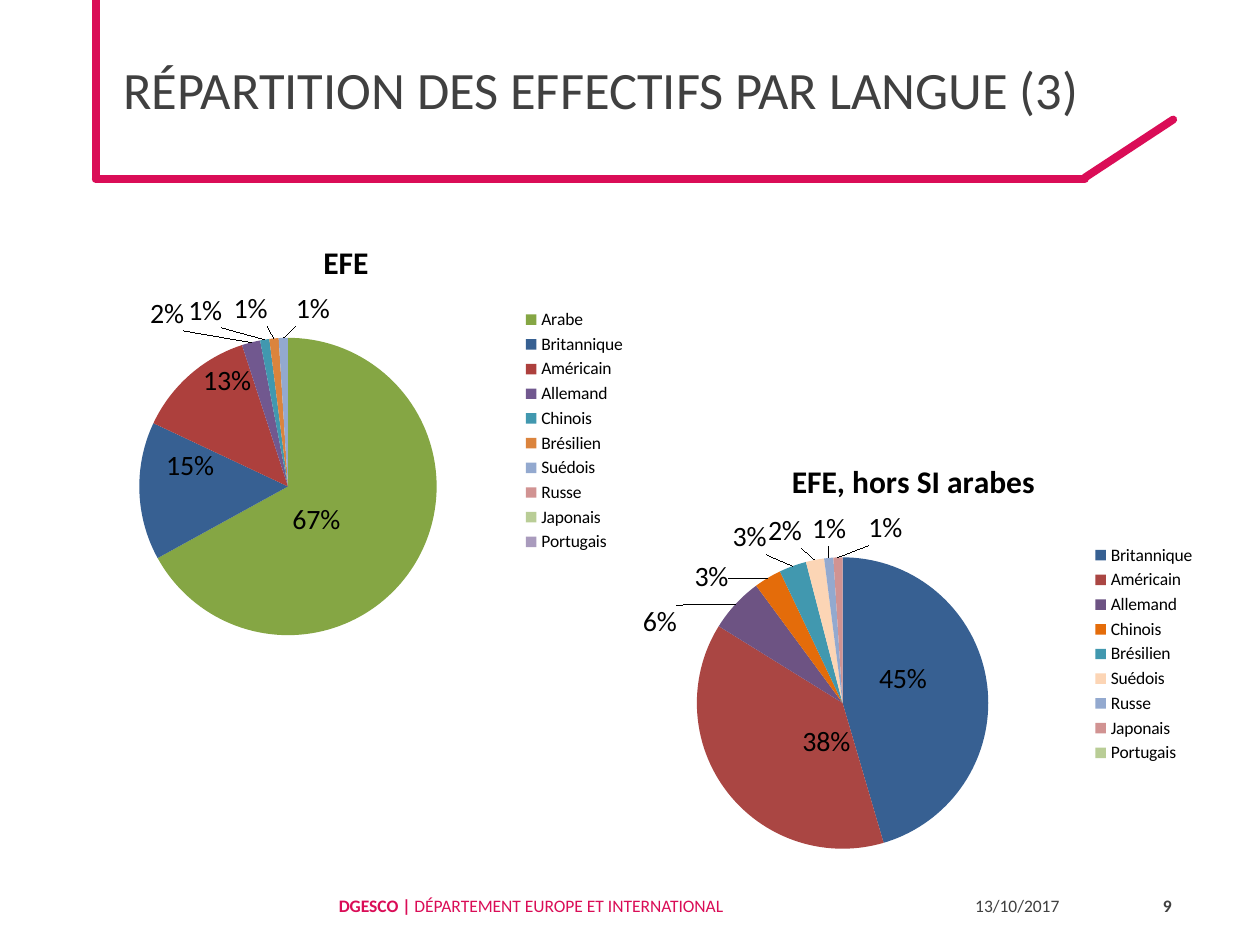
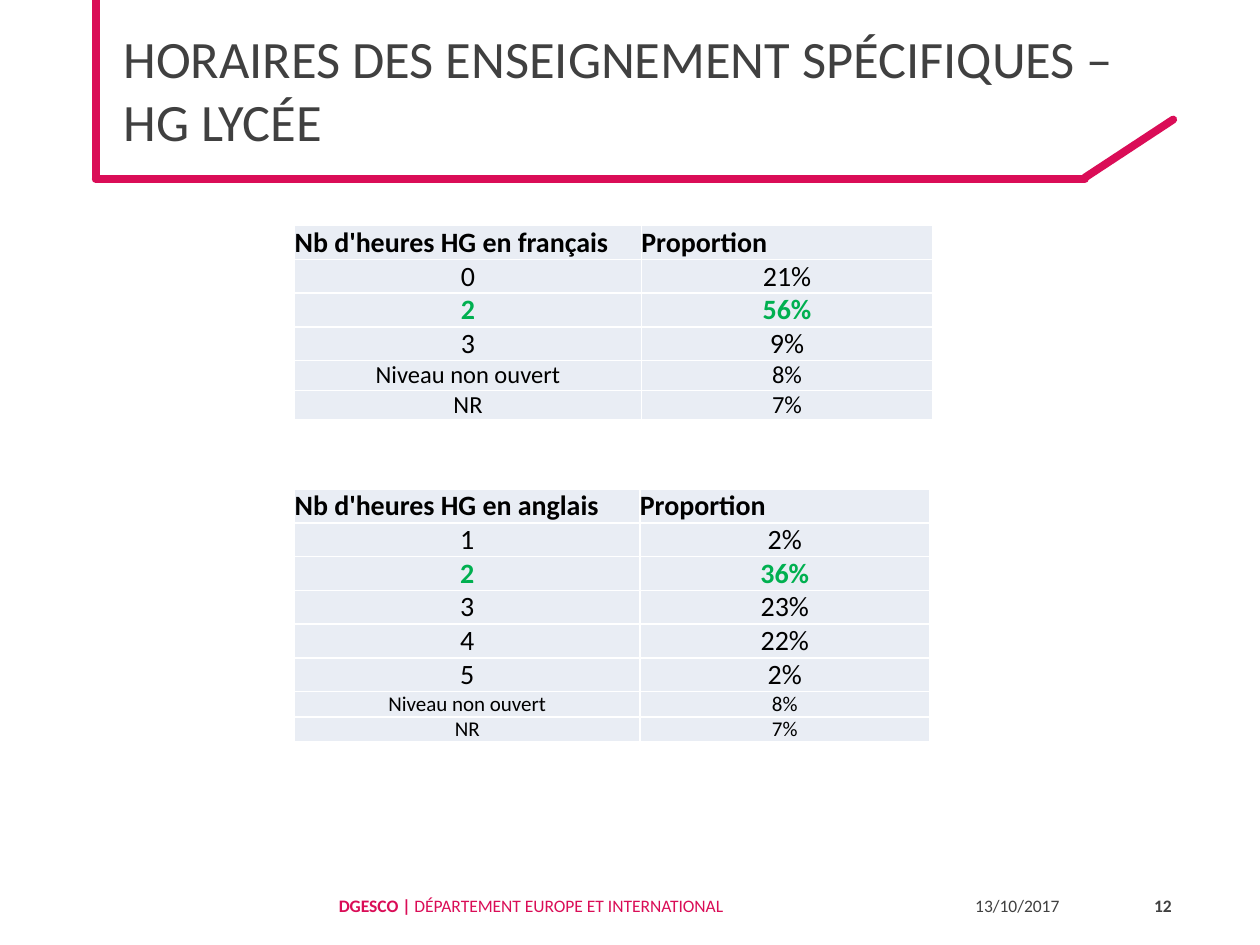
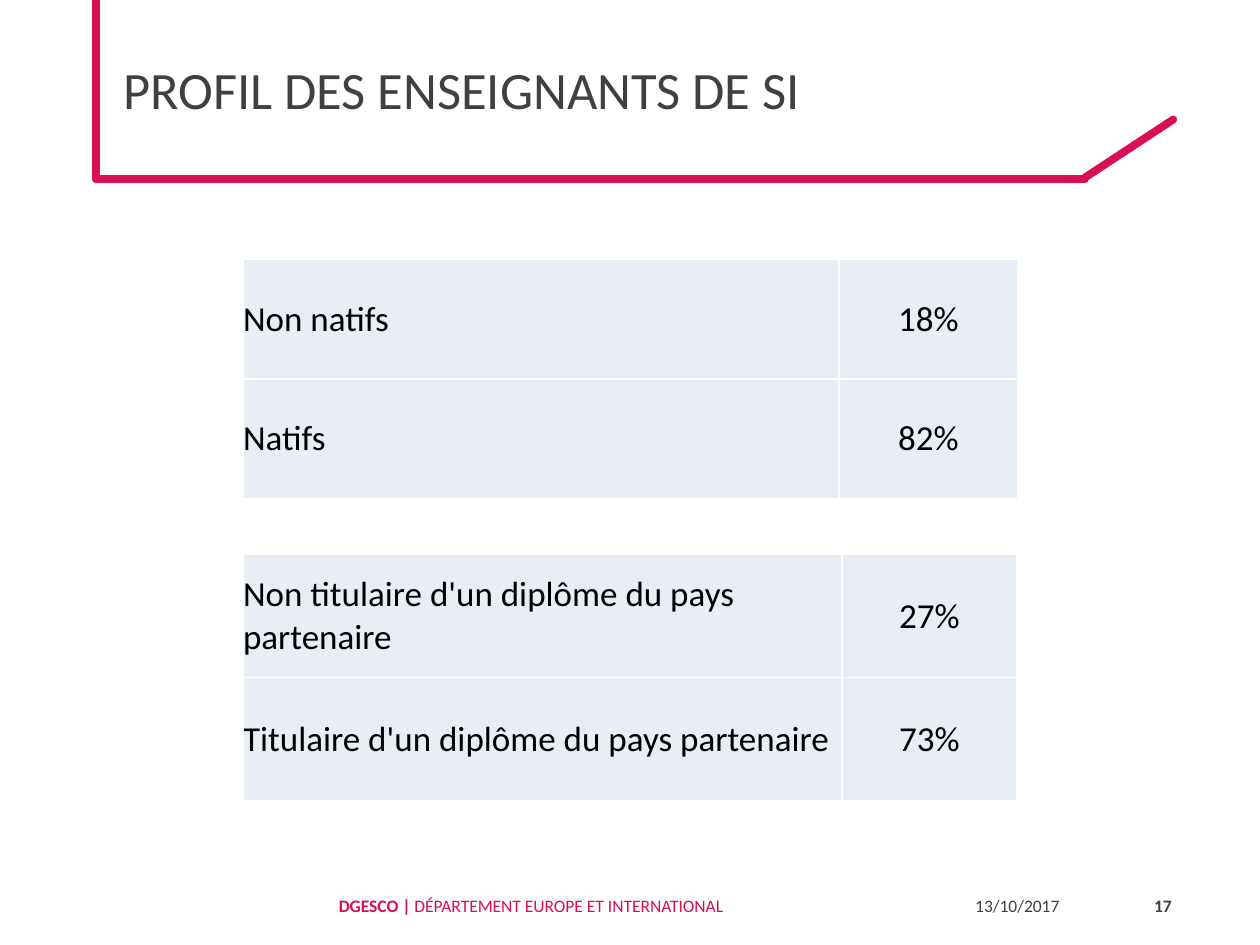
import dataclasses
import typing

import lxml.etree
import pptx
import pptx.chart.data
import pptx.chart.series
import pptx.dml.color
import pptx.enum.chart
import pptx.enum.shapes
import pptx.enum.text
import pptx.oxml.ns
import pptx.slide
import pptx.table
import pptx.util

Cm = pptx.util.Cm
Pt = pptx.util.Pt
qn = pptx.oxml.ns.qn
ALIGN = pptx.enum.text.PP_ALIGN
ANCHOR = pptx.enum.text.MSO_ANCHOR
LABEL = pptx.enum.chart.XL_LABEL_POSITION

FONT = "Calibri"
COLORS = {
    "pink": "DA0D57", "grey": "404040", "black": "000000", "white": "FFFFFF",
    "highlight": "00B050", "cell": "E9EDF4",
    "olive": "85A644", "navy": "376092", "brick": "AD403D", "red": "AA4643",
    "violet": "71588F", "plum": "6D5383", "teal": "4198AF", "amber": "DB843D",
    "orange": "E46C0A", "peach": "FCD5B5", "sky": "93A9CF", "rose": "D19392",
    "lime": "B9CD96", "lilac": "A99BBD",
}
LINE_HEIGHTS = {16: 0.68, 14: 0.6, 12: 0.51}
CHART_SIZE = (11.99, 8.99)


class Segment(typing.NamedTuple):
    x1: float
    y1: float
    x2: float
    y2: float


class Box(typing.NamedTuple):
    left: float
    top: float
    width: float
    height: float


class Run(typing.NamedTuple):
    text: str
    color: str
    size: float = 10
    bold: bool = False


class Slice(typing.NamedTuple):
    language: str
    percent: int
    color: str
    dx: float = 0
    dy: float = 0


@dataclasses.dataclass
class Pie:
    title: str
    left: float
    top: float
    title_at: tuple[float, float]
    plot_at: tuple[float, float, float, float]
    slices: list[Slice]


@dataclasses.dataclass
class Row:
    label: str
    value: str
    size: int = 16
    bold: bool = False
    color: str = "black"
    header: bool = False


@dataclasses.dataclass
class Grid:
    left: float
    top: float
    widths: tuple[float, float]
    rows: list[Row]
    row_height: float = 0
    label_align: ALIGN = ALIGN.CENTER
    anchor: ANCHOR = ANCHOR.BOTTOM


FRAME = [
    Segment(1.93, 3.61, 21.87, 3.61),
    Segment(21.87, 3.58, 23.65, 2.41),
    Segment(1.93, 3.58, 1.93, 0),
]
TITLE_BOX = Box(2.24, 0, 21.89, 3.58)
FOOTER_BOX = Box(6.58, 17.75, 12.83, 1.02)
DATE_BOX = Box(19.41, 17.75, 3.23, 1.02)
NUMBER_BOX = Box(22.63, 17.75, 1.24, 1.02)

PIES = [
    Pie("EFE", 0.89, 4.19, (0.46, 0.06), (0.16, 0.29, 0.5, 0.67), [
        Slice("Arabe", 67, "olive", -0.06, -0.01),
        Slice("Britannique", 15, "navy", -0.04, -0.05),
        Slice("Américain", 13, "brick", -0.02, -0.11),
        Slice("Allemand", 2, "violet", -0.11, -0.01),
        Slice("Chinois", 1, "teal", -0.07, -0.01),
        Slice("Brésilien", 1, "amber", -0.01, -0.01),
        Slice("Suédois", 1, "sky", 0.05, -0.01),
        Slice("Russe", 0, "rose"),
        Slice("Japonais", 0, "lime"),
        Slice("Portugais", 0, "lilac"),
    ]),
    Pie("EFE, hors SI arabes", 12.37, 8.69, (0.29, 0.05), (0.14, 0.28, 0.49, 0.66), [
        Slice("Britannique", 45, "navy", -0.02, -0.03),
        Slice("Américain", 38, "red", 0.07, -0.01),
        Slice("Allemand", 6, "plum", -0.09, 0.09),
        Slice("Chinois", 3, "orange", -0.06, 0.05),
        Slice("Brésilien", 3, "teal", -0.04, -0.01),
        Slice("Suédois", 2, "peach", -0.02, -0.01),
        Slice("Russe", 1, "sky", 0.03, -0.01),
        Slice("Japonais", 1, "rose", 0.08, -0.01),
        Slice("Portugais", 0, "lime"),
    ]),
]

HOURS = [
    Grid(5.94, 4.55, (6.99, 5.87), [
        Row("Nb d'heures HG en français", "Proportion", bold=True, header=True),
        Row("0", "21%"),
        Row("2", "56%", bold=True, color="highlight"),
        Row("3", "9%"),
        Row("Niveau non ouvert", "8%", 14),
        Row("NR", "7%", 14),
    ]),
    Grid(5.94, 9.86, (6.96, 5.84), [
        Row("Nb d'heures HG en anglais", "Proportion", bold=True, header=True),
        Row("1", "2%"),
        Row("2", "36%", bold=True, color="highlight"),
        Row("3", "23%"),
        Row("4", "22%"),
        Row("5", "2%"),
        Row("Niveau non ouvert", "8%", 12),
        Row("NR", "7%", 12),
    ]),
]

PROFILES = [
    Grid(4.9, 5.23, (12.01, 3.61), [
        Row("Non natifs", "18%", 20),
        Row("Natifs", "82%", 20),
    ], 2.41, ALIGN.LEFT, ANCHOR.MIDDLE),
    Grid(4.9, 11.18, (12.07, 3.53), [
        Row("Non titulaire d'un diplôme du pays partenaire", "27%", 20),
        Row("Titulaire d'un diplôme du pays partenaire", "73%", 20),
    ], 2.48, ALIGN.LEFT, ANCHOR.MIDDLE),
]


def rgb(name: str) -> pptx.dml.color.RGBColor:
    return pptx.dml.color.RGBColor.from_string(COLORS[name])


def set_format(target: typing.Any, **values: typing.Any) -> None:
    for name, value in values.items():
        setattr(target, name, value)


def set_font(font: typing.Any, size: float, color: str, bold: bool = False) -> None:
    set_format(font, name=FONT, size=Pt(size), bold=bold)
    font.color.rgb = rgb(color)


def add_text(s: pptx.slide.Slide, box: Box, runs: list[Run], align: ALIGN = ALIGN.LEFT) -> None:
    sp = s.shapes.add_textbox(*map(Cm, box))
    tf = sp.text_frame
    set_format(tf, word_wrap=True, vertical_anchor=ANCHOR.MIDDLE)
    p = tf.paragraphs[0]
    p.alignment = align
    for run in runs:
        for i, line in enumerate(run.text.split("\n")):
            if i:
                p.add_line_break()
            r = p.add_run()
            r.text = line
            set_font(r.font, run.size, run.color, run.bold)


def add_segment(s: pptx.slide.Slide, segment: Segment) -> None:
    straight = pptx.enum.shapes.MSO_CONNECTOR.STRAIGHT
    c = s.shapes.add_connector(straight, *map(Cm, segment))
    c.line.width = Pt(4.5)
    c.line.color.rgb = rgb("pink")
    spPr = c.element.spPr
    spPr.find(qn("a:ln")).set("cap", "rnd")
    lxml.etree.SubElement(spPr, qn("a:effectLst"))


def add_base(prs: typing.Any, title: str, number: int) -> pptx.slide.Slide:
    s = prs.slides.add_slide(prs.slide_layouts[6])
    for segment in FRAME:
        add_segment(s, segment)
    add_text(s, FOOTER_BOX, [
        Run("DGESCO | ", "pink", bold=True),
        Run("DÉPARTEMENT EUROPE ET INTERNATIONAL", "pink"),
    ])
    add_text(s, DATE_BOX, [Run("13/10/2017", "grey")])
    add_text(s, TITLE_BOX, [Run(title, "grey", 30)])
    add_text(s, NUMBER_BOX, [Run(str(number), "grey", bold=True)], ALIGN.RIGHT)
    return s


def set_layout(parent: typing.Any, index: int, **values: typing.Any) -> None:
    for old in parent.findall(qn("c:layout")):
        parent.remove(old)
    layout = parent.makeelement(qn("c:layout"))
    manual = lxml.etree.SubElement(layout, qn("c:manualLayout"))
    for name, value in values.items():
        lxml.etree.SubElement(manual, qn(f"c:{name}")).set("val", str(value))
    parent.insert(index, layout)


def format_slices(ser: pptx.chart.series.PieSeries, slices: list[Slice]) -> None:
    labels = ser.data_labels
    set_format(labels, show_percentage=True, show_value=False,
               number_format="0%", number_format_is_linked=False)
    set_font(labels.font, 16, "black")
    for i, item in enumerate(slices):
        point = ser.points[i]
        point.format.fill.solid()
        point.format.fill.fore_color.rgb = rgb(item.color)
        label = point.data_label
        set_font(label.font, 16, "black")
        label.position = LABEL.CENTER if item.percent > 10 else LABEL.OUTSIDE_END


def add_pie(s: pptx.slide.Slide, pie: Pie) -> None:
    data = pptx.chart.data.CategoryChartData(number_format="0")
    data.categories = [item.language for item in pie.slices]
    data.add_series("Series 1", [item.percent for item in pie.slices])
    box = Box(pie.left, pie.top, *CHART_SIZE)
    kind = pptx.enum.chart.XL_CHART_TYPE.PIE
    chart = s.shapes.add_chart(kind, *map(Cm, box), data).chart
    set_font(chart.font, 10, "black")
    set_format(chart, has_title=True, has_legend=True)
    set_format(chart.legend, include_in_layout=False,
               position=pptx.enum.chart.XL_LEGEND_POSITION.RIGHT)
    p = chart.chart_title.text_frame.paragraphs[0]
    r = p.add_run()
    r.text = pie.title
    set_font(r.font, 18, "black", True)
    plot = chart.plots[0]
    plot.vary_by_categories = True
    format_slices(plot.series[0], pie.slices)

    root = chart.element
    edges = {"xMode": "edge", "yMode": "edge"}
    set_layout(root.find(".//" + qn("c:title")), 1, **edges,
               **dict(zip("xy", pie.title_at)))
    set_layout(root.find(".//" + qn("c:plotArea")), 0, layoutTarget="inner", **edges,
               **dict(zip("xywh", pie.plot_at)))
    for dLbl, item in zip(root.iter(qn("c:dLbl")), pie.slices):
        set_layout(dLbl, 1, x=item.dx, y=item.dy)
        dLbl.find(qn("c:showVal")).set("val", "0")
        dLbl.find(qn("c:showPercent")).set("val", "1" if item.percent else "0")


def add_borders(cell: pptx.table._Cell) -> None:
    tcPr = cell._tc.get_or_add_tcPr()
    for i, side in enumerate("LRTB"):
        ln = tcPr.makeelement(qn(f"a:ln{side}"), {"w": str(Pt(1))})
        fill = lxml.etree.SubElement(ln, qn("a:solidFill"))
        lxml.etree.SubElement(fill, qn("a:srgbClr")).set("val", COLORS["white"])
        tcPr.insert(i, ln)


def fill_cell(cell: pptx.table._Cell, text: str, row: Row, align: ALIGN, anchor: ANCHOR) -> None:
    set_format(cell, margin_left=0, margin_right=0, margin_top=0, margin_bottom=0,
               vertical_anchor=anchor)
    add_borders(cell)
    cell.fill.solid()
    cell.fill.fore_color.rgb = rgb("cell")
    p = cell.text_frame.paragraphs[0]
    p.alignment = align
    r = p.add_run()
    r.text = text
    set_font(r.font, row.size, row.color, row.bold)


def add_grid(s: pptx.slide.Slide, grid: Grid) -> None:
    heights = [grid.row_height or LINE_HEIGHTS[row.size] for row in grid.rows]
    box = Box(grid.left, grid.top, sum(grid.widths), sum(heights))
    table = s.shapes.add_table(len(grid.rows), 2, *map(Cm, box)).table
    set_format(table, first_row=False, horz_banding=False)
    for column, width in zip(table.columns, grid.widths):
        column.width = Cm(width)
    for i, (row, height) in enumerate(zip(grid.rows, heights)):
        table.rows[i].height = Cm(height)
        aligns = (ALIGN.LEFT,) * 2 if row.header else (grid.label_align, ALIGN.CENTER)
        for j, (text, align) in enumerate(zip((row.label, row.value), aligns)):
            fill_cell(table.cell(i, j), text, row, align, grid.anchor)


def main() -> None:
    prs = pptx.Presentation()
    set_format(prs, slide_width=Cm(25.4), slide_height=Cm(19.05))

    s = add_base(prs, "RÉPARTITION DES EFFECTIFS PAR LANGUE (3)", 9)
    for pie in PIES:
        add_pie(s, pie)

    s = add_base(prs, "HORAIRES DES ENSEIGNEMENT SPÉCIFIQUES –\nHG LYCÉE", 12)
    for grid in HOURS:
        add_grid(s, grid)

    s = add_base(prs, "PROFIL DES ENSEIGNANTS DE SI", 17)
    for grid in PROFILES:
        add_grid(s, grid)

    prs.save("out.pptx")


if __name__ == "__main__":
    main()
